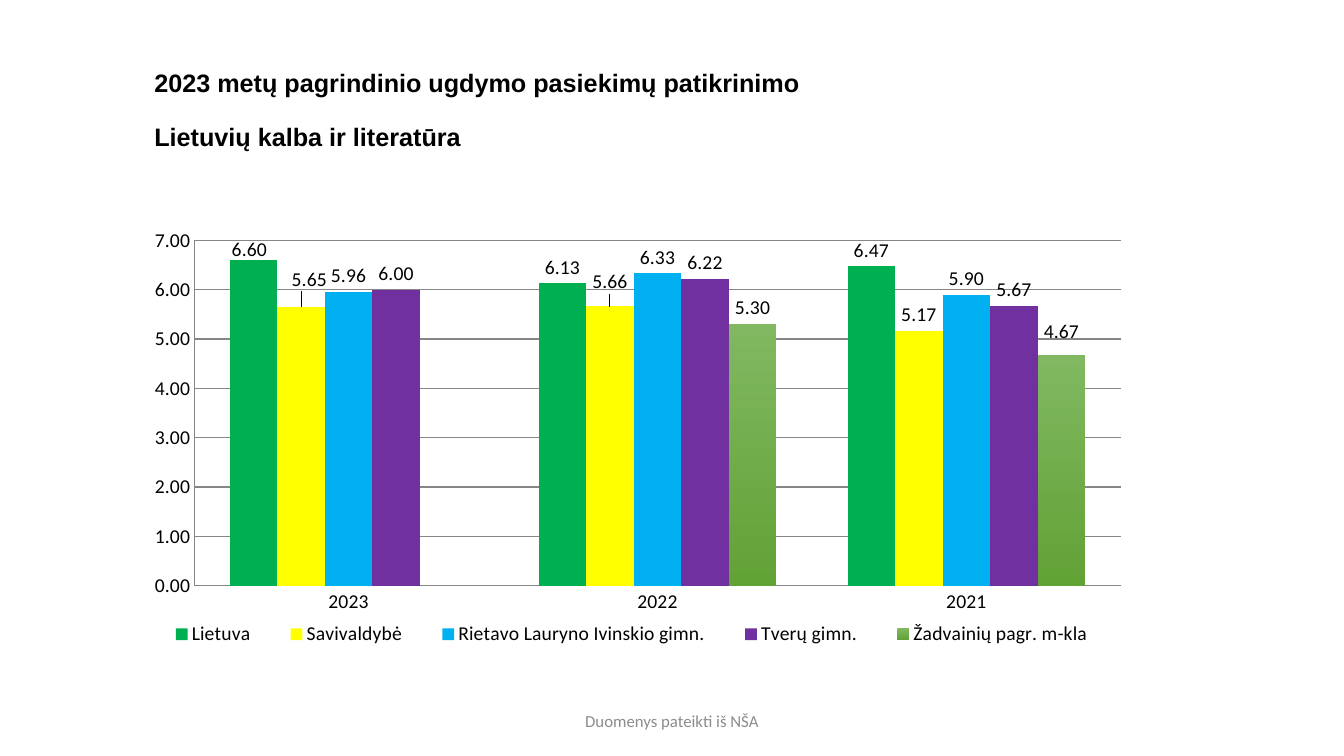
from pptx import Presentation
from pptx.chart.data import CategoryChartData
from pptx.dml.color import RGBColor
from pptx.enum.chart import (XL_CHART_TYPE, XL_LABEL_POSITION,
                             XL_LEGEND_POSITION, XL_TICK_MARK)
from pptx.enum.text import MSO_ANCHOR, PP_ALIGN
from pptx.oxml import parse_xml
from pptx.oxml.ns import nsdecls
from pptx.util import Pt

COLUMNS = XL_CHART_TYPE.COLUMN_CLUSTERED
OUTSIDE = XL_LABEL_POSITION.OUTSIDE_END
BOTTOM = XL_LEGEND_POSITION.BOTTOM
NO_TICK = XL_TICK_MARK.NONE
MIDDLE = MSO_ANCHOR.MIDDLE
LEFT, CENTER = PP_ALIGN.LEFT, PP_ALIGN.CENTER

TITLE = ["2023 metų pagrindinio ugdymo pasiekimų patikrinimo",
         "Lietuvių kalba ir literatūra"]
SOURCE = "Duomenys pateikti iš NŠA"
YEARS = ["2023", "2022", "2021"]
SCHOOLS = [
    ("Lietuva", [6.6, 6.13, 6.47], ["00B050"]),
    ("Savivaldybė", [5.65, 5.66, 5.17], ["FFFF00"]),
    ("Rietavo Lauryno Ivinskio gimn.", [5.96, 6.33, 5.9], ["00B0F0"]),
    ("Tverų gimn.", [6, 6.22, 5.67], ["7030A0"]),
    ("Žadvainių pagr. m-kla", [None, 5.3, 4.67], ["81B861", "61A235"]),
]
# (series, year): label shift in hundredths of the chart's width and height
SHIFTS = {(0, 0): (-0.4, 1.3), (1, 0): (0.8, -2.4),
          (1, 1): (0, -1.8), (4, 2): (0, -1.6)}


def rgb(code):
    return RGBColor.from_string(code)


def style(font, size, color, name, bold=False):
    font.size, font.name, font.bold = Pt(size), name, bold
    font.color.rgb = rgb(color)


def add_title(slide):
    title = slide.shapes.title
    title.left, title.top = Pt(103), Pt(17.3)
    title.width, title.height = Pt(791), Pt(104.4)
    frame = title.text_frame
    frame.word_wrap = True
    frame.vertical_anchor = MIDDLE
    frame.margin_top = Pt(23.6)
    frame.text = "\n".join(TITLE)
    for par in frame.paragraphs:
        style(par.font, 18, "000000", "Arial", True)
        par.alignment, par.line_spacing = LEFT, 0.9
    frame.paragraphs[1].space_before = Pt(19.5)


def add_note(slide):
    box = slide.shapes.add_textbox(Pt(318), Pt(500.4), Pt(324), Pt(28.8))
    frame = box.text_frame
    frame.word_wrap = True
    frame.vertical_anchor = MIDDLE
    frame.text = SOURCE
    par = frame.paragraphs[0]
    par.alignment = CENTER
    style(par.font, 12, "8C8C8C", "Calibri")


def set_layout(part, index, body):
    """Give a chart part a manual layout, as its child number index."""
    for old in part.xpath("c:layout"):
        part.remove(old)
    part.insert(index, parse_xml(
        f'<c:layout {nsdecls("c")}><c:manualLayout>{body}'
        '</c:manualLayout></c:layout>'))


def set_box(part, index, x, y, w, h, target=""):
    """Place a chart part by shares of the chart's width and height."""
    set_layout(part, index, target
               + '<c:xMode val="edge"/><c:yMode val="edge"/>'
               f'<c:x val="{x}"/><c:y val="{y}"/>'
               f'<c:w val="{w}"/><c:h val="{h}"/>')


def paint(fill, colors):
    """Fill with one colour, or fade from the first down to the second."""
    if len(colors) == 1:
        fill.solid()
        fill.fore_color.rgb = rgb(colors[0])
        return
    fill.gradient()
    fill.gradient_angle = 270
    for stop, color in zip(fill.gradient_stops, colors):
        stop.color.rgb = rgb(color)


def style_axes(chart):
    values, years = chart.value_axis, chart.category_axis
    values.minimum_scale, values.maximum_scale = 0, 7
    values.major_unit = 1
    values.tick_labels.number_format = "0.00"
    values.tick_labels.number_format_is_linked = False
    for axis in (values, years):
        axis.major_tick_mark = axis.minor_tick_mark = NO_TICK
    for part in (values, years, values.major_gridlines):
        part.format.line.color.rgb = rgb("868686")
        part.format.line.width = Pt(0.75)


def style_bars(plot):
    plot.gap_width, plot.overlap = 150, 0
    plot.vary_by_categories = False
    for bars, (_, _, colors) in zip(plot.series, SCHOOLS):
        paint(bars.format.fill, colors)
        bars.invert_if_negative = False
        labels = bars.data_labels
        labels.show_value = True
        labels.position = OUTSIDE
        labels.number_format = "0.00"
        labels.number_format_is_linked = False
        style(labels.font, 14, "000000", "Calibri")


def shift_labels(chart):
    for (row, year), (x, y) in SHIFTS.items():
        label = chart.plots[0].series[row].points[year].data_label
        style(label.font, 14, "000000", "Calibri")
        label.position = OUTSIDE
    for (row, year), (x, y) in SHIFTS.items():
        route = f"//c:ser[c:idx/@val={row}]//c:dLbl[c:idx/@val={year}]"
        set_layout(chart.element.xpath(route)[0], 1,
                   f'<c:x val="{x / 100}"/><c:y val="{y / 100}"/>')


def add_chart(slide):
    data = CategoryChartData(number_format="0.00")
    data.categories = YEARS
    for name, marks, _ in SCHOOLS:
        data.add_series(name, marks)
    chart = slide.shapes.add_chart(COLUMNS, Pt(79.2), Pt(145.4), Pt(743.8),
                                   Pt(329), data).chart
    style(chart.font, 14, "000000", "Calibri")
    chart.has_title = False
    chart.has_legend = True
    chart.legend.position = BOTTOM
    chart.legend.include_in_layout = False
    style_axes(chart)
    style_bars(chart.plots[0])
    shift_labels(chart)
    set_box(chart.element.xpath("//c:plotArea")[0], 0, 0.08, 0.08, 0.89, 0.75,
            '<c:layoutTarget val="inner"/>')
    set_box(chart.element.xpath("//c:legend")[0], 1, 0.03, 0.9, 0.94, 0.07)


def main():
    deck = Presentation()
    deck.slide_width, deck.slide_height = Pt(960), Pt(540)
    slide = deck.slides.add_slide(deck.slide_layouts[5])
    add_title(slide)
    add_chart(slide)
    add_note(slide)
    deck.save("out.pptx")


if __name__ == "__main__":
    main()
